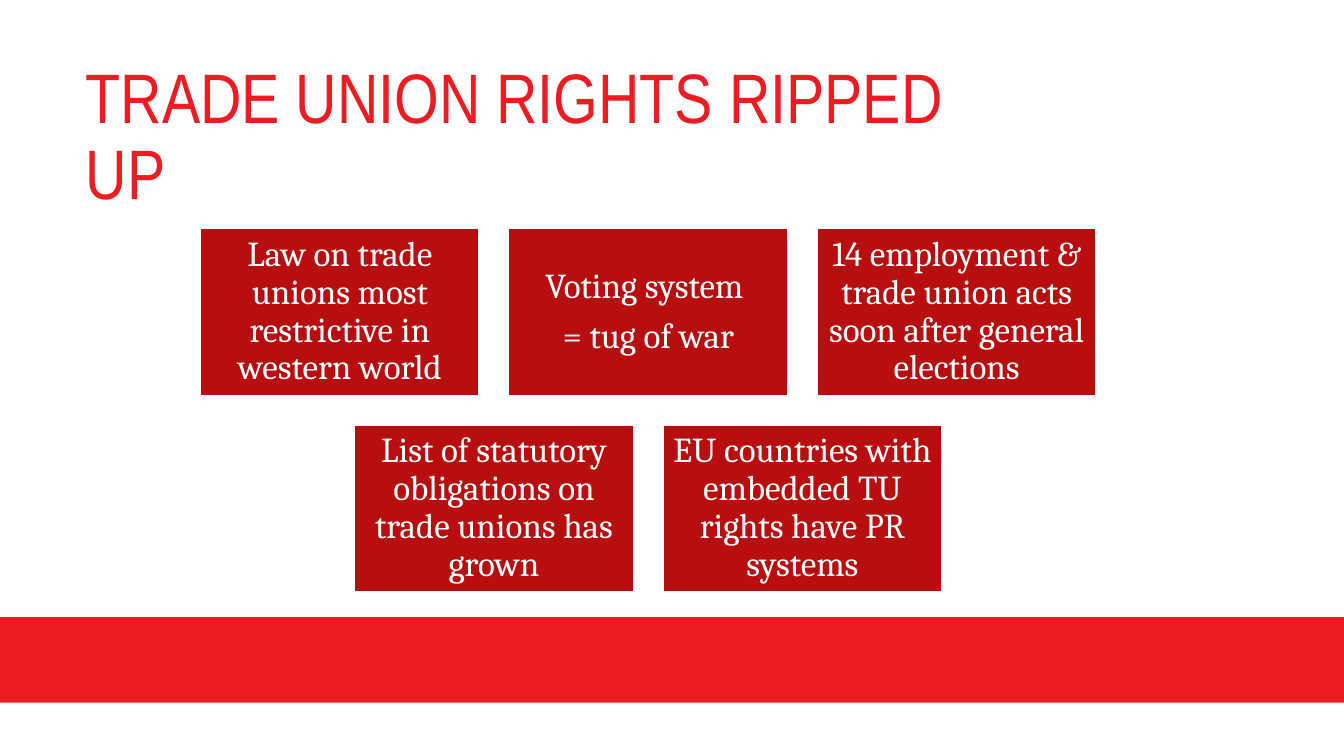
from pptx import Presentation
from pptx.dml.color import RGBColor
from pptx.enum.shapes import MSO_SHAPE
from pptx.enum.text import MSO_ANCHOR, MSO_AUTO_SIZE, PP_ALIGN
from pptx.util import Pt

RED = RGBColor(0xED, 0x1C, 0x23)
DARK_RED = RGBColor(0xB8, 0x0E, 0x0F)
WHITE = RGBColor(0xFF, 0xFF, 0xFF)

BOX_W, BOX_H, GAP = 200.2, 120.2, 20.1
CENTER_X, TOP = 463, 162.7
ROWS = [
    [
        "Law on trade unions most restrictive in western world",
        "Voting system \n= tug of war",
        "14 employment & trade union acts soon after general elections",
    ],
    [
        "List of statutory obligations on trade unions has grown",
        "EU countries with embedded TU rights have PR systems",
    ],
]


def add_block(s, left, top, width, height, color):
    sp = s.shapes.add_shape(MSO_SHAPE.RECTANGLE, Pt(left), Pt(top), Pt(width), Pt(height))
    sp.shadow.inherit = False
    sp.fill.solid()
    sp.fill.fore_color.rgb = color
    sp.line.fill.background()
    return sp


def style_text(tf, font, size, color, align):
    tf.word_wrap = True
    tf.auto_size = MSO_AUTO_SIZE.NONE
    tf.vertical_anchor = MSO_ANCHOR.MIDDLE
    for p in tf.paragraphs:
        p.alignment = align
        p.line_spacing = 0.9
        p.space_before = Pt(0)
        for r in p.runs:
            r.font.name = font
            r.font.size = Pt(size)
            r.font.color.rgb = color


prs = Presentation()
prs.slide_width, prs.slide_height = Pt(960), Pt(540)
s = prs.slides.add_slide(prs.slide_layouts[5])

add_block(s, 0, 440.8, 960, 61.2, RED)

title = s.shapes.title
title.left, title.top, title.width, title.height = Pt(54), Pt(54), Pt(657.4), Pt(90.7)
title.text_frame.text = "TRADE UNION RIGHTS RIPPED UP"
style_text(title.text_frame, "Arial Narrow", 50, RED, PP_ALIGN.LEFT)

for i, row in enumerate(ROWS):
    row_w = len(row) * BOX_W + (len(row) - 1) * GAP
    for j, text in enumerate(row):
        left = CENTER_X - row_w / 2 + j * (BOX_W + GAP)
        sp = add_block(s, left, TOP + i * (BOX_H + GAP), BOX_W, BOX_H, DARK_RED)
        sp.line.color.rgb = WHITE
        sp.line.width = Pt(2)
        tf = sp.text_frame
        tf.margin_left = tf.margin_right = tf.margin_top = tf.margin_bottom = Pt(7)
        tf.text = text
        style_text(tf, "Cambria", 25, WHITE, PP_ALIGN.CENTER)
        for p in tf.paragraphs[:-1]:
            p.space_after = Pt(8.75)

prs.save("out.pptx")
